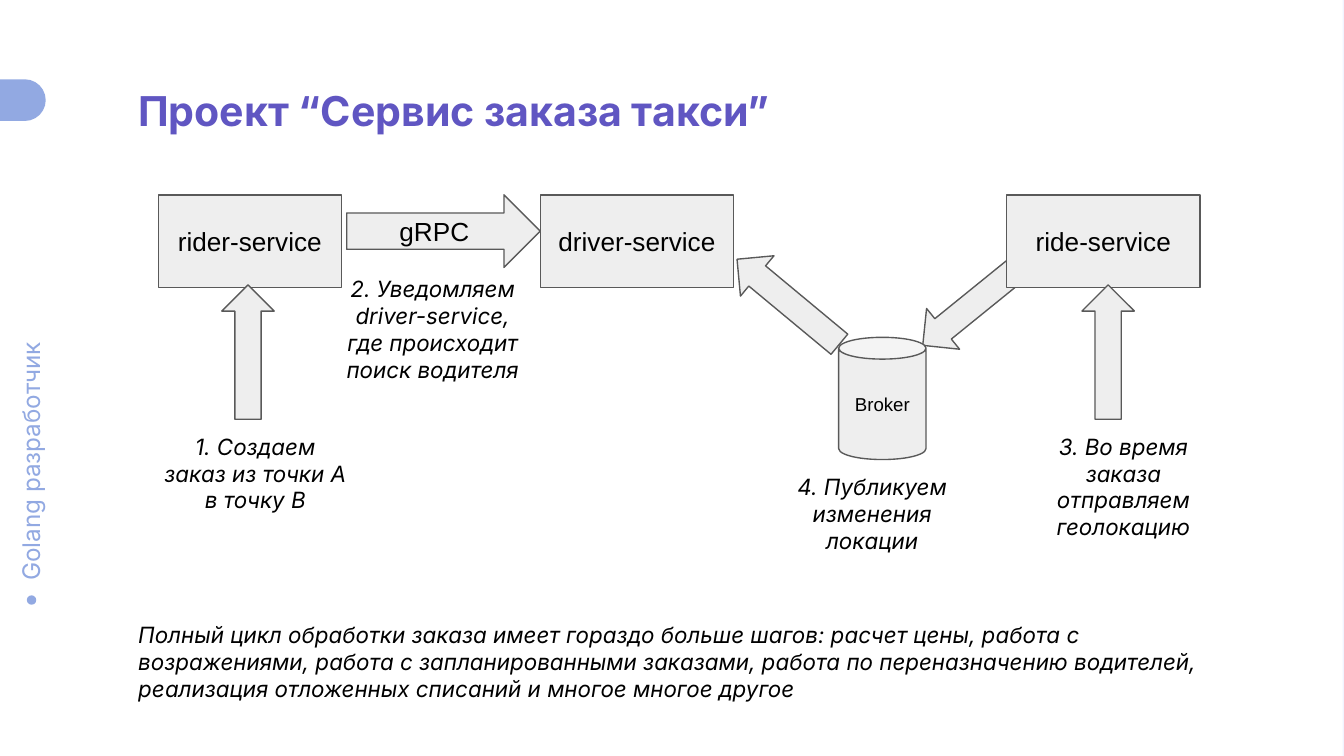
from pptx import Presentation
from pptx import util as u
from pptx.dml.color import RGBColor
from pptx.enum import shapes, text

WIDE = 10
HIGH = WIDE * 9 / 16
COLORS = {
    "back": "F1F4FF", "page": "FFFFFF", "accent": "92A9E2",
    "title": "6056C2", "fill": "EEEEEE", "line": "595959", "ink": "000000",
}
KIND = shapes.MSO_SHAPE
LEFT, MID = text.PP_ALIGN.LEFT, text.PP_ALIGN.CENTER


def color(name):
    return RGBColor.from_string(COLORS[name])


def box(at):
    return [u.Inches(n) for n in at]


def write(shape, words, size, font="Inter", ink="ink", align=LEFT,
          bold=False, italic=False, pad=0.1):
    frame = shape.text_frame
    frame.word_wrap = True
    frame.margin_left = frame.margin_right = u.Inches(0.1)
    frame.margin_top = frame.margin_bottom = u.Inches(pad)
    para = frame.paragraphs[0]
    para.alignment = align
    run = para.add_run()
    run.text = words
    run.font.name = font
    run.font.size = u.Pt(size)
    run.font.bold = bold
    run.font.italic = italic
    run.font.color.rgb = color(ink)


def label(slide, at, words, size, **style):
    shape = slide.shapes.add_textbox(*box(at))
    write(shape, words, size, **style)
    return shape


def note(slide, at, words, align=MID):
    label(slide, at, words, 12, align=align, italic=True)


def plain(slide, kind, at, fill):
    shape = slide.shapes.add_shape(kind, *box(at))
    shape.shadow.inherit = False
    shape.fill.solid()
    shape.fill.fore_color.rgb = color(fill)
    shape.line.fill.background()
    return shape


def block(slide, kind, at, words="", size=14, turn=0):
    shape = plain(slide, kind, at, "fill")
    shape.line.color.rgb = color("line")
    shape.line.width = u.Pt(0.75)
    shape.rotation = turn
    if words:
        shape.text_frame.vertical_anchor = text.MSO_ANCHOR.MIDDLE
        write(shape, words, size, font="Arial", align=MID)


def frame(slide):
    slide.background.fill.solid()
    slide.background.fill.fore_color.rgb = color("back")
    plain(slide, KIND.RECTANGLE, (-0.01, 0, WIDE, HIGH), "page")
    side = label(slide, (-0.77, 3.21, 2, 0.42), "Golang разработчик", 13,
                 ink="accent")
    side.rotation = 270
    plain(slide, KIND.OVAL, (0.2, 4.43, 0.07, 0.07), "accent")
    tab = plain(slide, KIND.ROUNDED_RECTANGLE, (-0.38, 0.59, 0.72, 0.31),
                "accent")
    tab.adjustments[0] = 0.5


def main():
    deck = Presentation()
    deck.slide_width, deck.slide_height = u.Inches(WIDE), u.Inches(HIGH)
    slide = deck.slides.add_slide(deck.slide_layouts[6])

    # Page frame and title
    frame(slide)
    label(slide, (0.93, 0.59, 6.65, 0.47), "Проект “Сервис заказа такси”",
          22, ink="title", bold=True, pad=0.05)

    # Broker link that runs behind the service box
    block(slide, KIND.UP_ARROW, (7.09, 1.69, 0.39, 1.08), turn=231)

    # Services
    for left, width, name in ((1.18, 1.36, "rider-service"),
                              (4.02, 1.44, "driver-service"),
                              (7.49, 1.44, "ride-service")):
        block(slide, KIND.RECTANGLE, (left, 1.45, width, 0.69), name)

    # Arrows and broker
    for left in (1.65, 8.05):
        block(slide, KIND.UP_ARROW, (left, 2.12, 0.39, 1))
    block(slide, KIND.RIGHT_ARROW, (2.58, 1.45, 1.44, 0.54), "gRPC")
    block(slide, KIND.CAN, (6.24, 2.51, 0.65, 0.91), "Broker", 10)
    block(slide, KIND.UP_ARROW, (5.67, 1.75, 0.39, 0.99), turn=309.7)

    # Numbered steps
    for left, top, high, words in (
            (1.12, 3.12, 0.81, "1. Создаем заказ из точки A в точку B"),
            (2.44, 1.95, 1.01, "2. Уведомляем driver-service, "
                               "где происходит поиск водителя"),
            (7.58, 3.12, 1.01, "3. Во время заказа отправляем геолокацию"),
            (5.71, 3.42, 0.81, "4. Публикуем изменения локации")):
        note(slide, (left, top, 1.56, high), words)

    # Closing remark
    note(slide, (0.93, 4.52, 8.19, 0.81),
         "Полный цикл обработки заказа имеет гораздо больше шагов: "
         "расчет цены, работа с возражениями, работа с запланированными "
         "заказами, работа по переназначению водителей, реализация "
         "отложенных списаний и многое многое другое", LEFT)

    deck.save("out.pptx")


if __name__ == "__main__":
    main()
